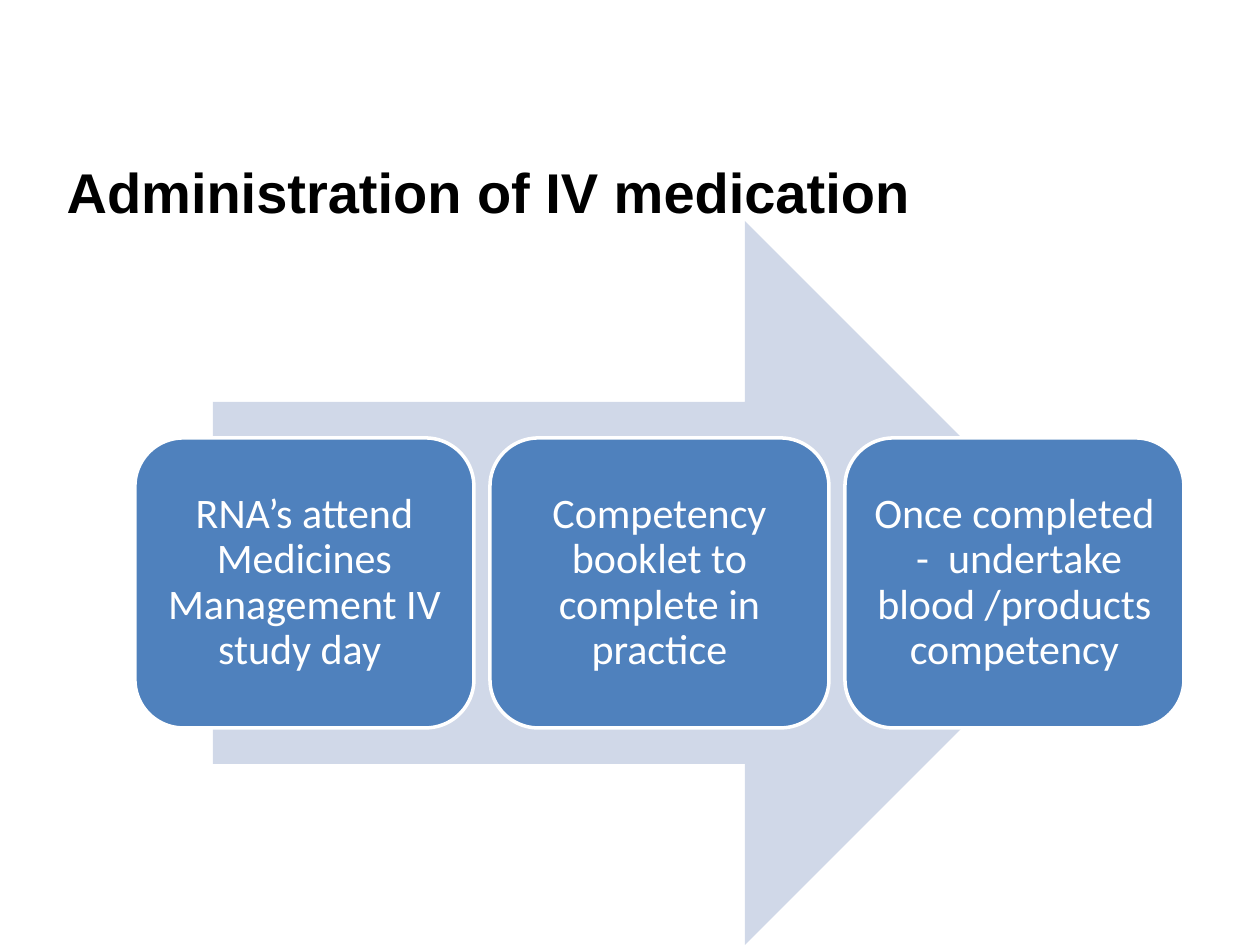
from pptx import Presentation
from pptx.dml.color import RGBColor
from pptx.enum.shapes import MSO_SHAPE
from pptx.enum.text import MSO_ANCHOR, MSO_AUTO_SIZE, PP_ALIGN
from pptx.util import Emu, Pt

EMU_PER_PX = 914400 // 126
STEPS = [
    "RNA’s attend Medicines Management IV study day ",
    "Competency booklet to complete in practice",
    "Once completed  -  undertake blood /products competency",
]
STEP_LEFT, STEP_TOP, STEP_WIDTH, STEP_HEIGHT = 135, 438, 339, 290
STEP_PITCH = 355


def px(n):
    return Emu(n * EMU_PER_PX)


def rgb(value):
    return RGBColor.from_string(value)


def add_run(p, text, font, size, color, bold=False):
    r = p.add_run()
    r.text = text
    r.font.name = font
    r.font.size = Pt(size)
    r.font.bold = bold
    r.font.color.rgb = rgb(color)


def set_title(s, text):
    title = s.shapes.title
    title.left, title.top, title.width, title.height = px(54), px(116), px(1134), px(115)
    tf = title.text_frame
    tf.word_wrap = True
    tf.auto_size = MSO_AUTO_SIZE.NONE
    tf.vertical_anchor = MSO_ANCHOR.BOTTOM
    p = tf.paragraphs[0]
    p.alignment = PP_ALIGN.LEFT
    add_run(p, text, "Arial", 32, "000000", bold=True)


def add_filled(shapes, kind, left, top, width, height, fill):
    sp = shapes.add_shape(kind, px(left), px(top), px(width), px(height))
    sp.shadow.inherit = False
    sp.fill.solid()
    sp.fill.fore_color.rgb = rgb(fill)
    sp.line.fill.background()
    return sp


def add_step(shapes, left, text):
    sp = add_filled(shapes, MSO_SHAPE.ROUNDED_RECTANGLE,
                    left, STEP_TOP, STEP_WIDTH, STEP_HEIGHT, "4F81BD")
    sp.line.color.rgb = rgb("FFFFFF")
    sp.line.width = Pt(2)
    tf = sp.text_frame
    tf.word_wrap = True
    tf.vertical_anchor = MSO_ANCHOR.MIDDLE
    tf.margin_left = tf.margin_right = tf.margin_top = tf.margin_bottom = px(13)
    p = tf.paragraphs[0]
    p.alignment = PP_ALIGN.CENTER
    p.line_spacing = 0.9
    add_run(p, text, "Calibri", 24, "FFFFFF")


def main():
    prs = Presentation()
    prs.slide_width, prs.slide_height = px(1260), px(945)
    s = prs.slides.add_slide(prs.slide_layouts[5])
    set_title(s, "Administration of IV medication")
    process = s.shapes.add_group_shape().shapes
    add_filled(process, MSO_SHAPE.RIGHT_ARROW, 213, 221, 894, 724, "D0D8E8")
    for i, text in enumerate(STEPS):
        add_step(process, STEP_LEFT + i * STEP_PITCH, text)
    prs.save("out.pptx")


if __name__ == "__main__":
    main()
